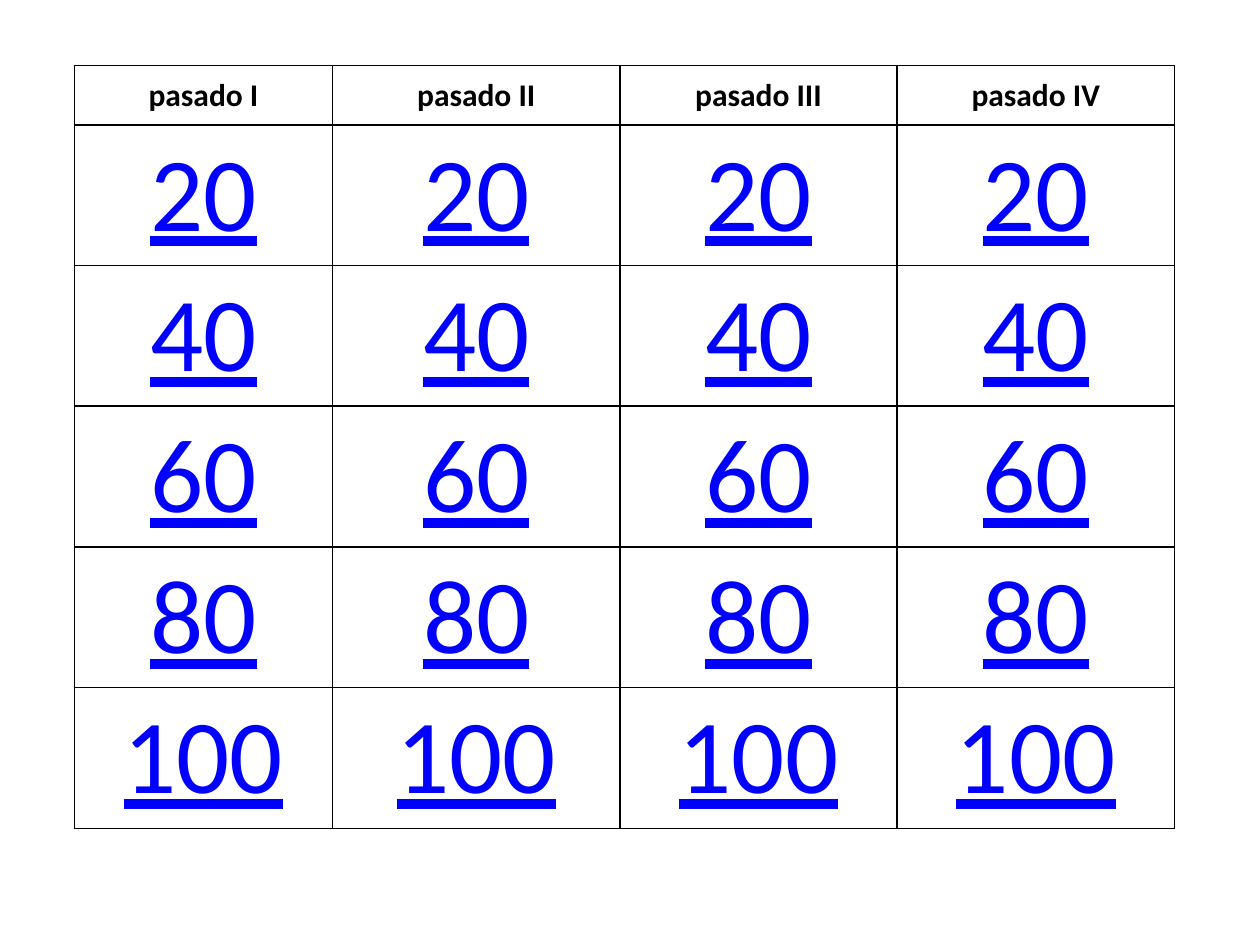
from pptx import Presentation
from pptx.dml.color import RGBColor
from pptx.enum.text import MSO_ANCHOR as Anchor, PP_ALIGN as Align
from pptx.oxml import parse_xml
from pptx.oxml.ns import nsdecls
from pptx.util import Pt

# Content
HEADS = ["pasado I", "pasado II", "pasado III", "pasado IV"]
POINTS = [20, 40, 60, 80, 100]
ROWS = [HEADS] + [[str(n)] * len(HEADS) for n in POINTS]

# Format
BLACK = RGBColor(0, 0, 0)
BLUE = RGBColor(0, 0, 255)
WHITE = RGBColor(255, 255, 255)
HEAD = {"name": "Calibri", "size": Pt(18), "bold": True}
SCORE = {"name": "Calibri", "size": Pt(60), "bold": False, "underline": True}
LEFT, TOP = 42.5, 37.5
WIDTHS = [147.6, 164.2, 158.4, 158.4]
HEIGHTS = [33.8] + [80.4] * len(POINTS)


def add_lines(cell):
    """Draw a thin black line on each side of the cell."""
    props = cell._tc.get_or_add_tcPr()
    for i, side in enumerate(("lnL", "lnR", "lnT", "lnB")):
        props.insert(i, parse_xml(
            f'<a:{side} {nsdecls("a")} w="{Pt(1)}"><a:solidFill>'
            f'<a:srgbClr val="{BLACK}"/></a:solidFill></a:{side}>'))


def fill_cell(cell, text, style, color):
    cell.fill.solid()
    cell.fill.fore_color.rgb = WHITE
    cell.vertical_anchor = Anchor.MIDDLE
    para = cell.text_frame.paragraphs[0]
    para.alignment = Align.CENTER
    run = para.add_run()
    run.text = text
    for key, value in style.items():
        setattr(run.font, key, value)
    run.font.color.rgb = color
    add_lines(cell)


def main():
    deck = Presentation()
    deck.slide_width, deck.slide_height = Pt(720), Pt(540)
    slide = deck.slides.add_slide(deck.slide_layouts[6])

    # Game board
    board = slide.shapes.add_table(
        len(ROWS), len(HEADS), Pt(LEFT), Pt(TOP),
        Pt(sum(WIDTHS)), Pt(sum(HEIGHTS))).table
    for col, width in zip(board.columns, WIDTHS):
        col.width = Pt(width)
    for r, (row, height) in enumerate(zip(ROWS, HEIGHTS)):
        board.rows[r].height = Pt(height)
        style, color = (SCORE, BLUE) if r else (HEAD, BLACK)
        for c, text in enumerate(row):
            fill_cell(board.cell(r, c), text, style, color)

    deck.save("out.pptx")


if __name__ == "__main__":
    main()
